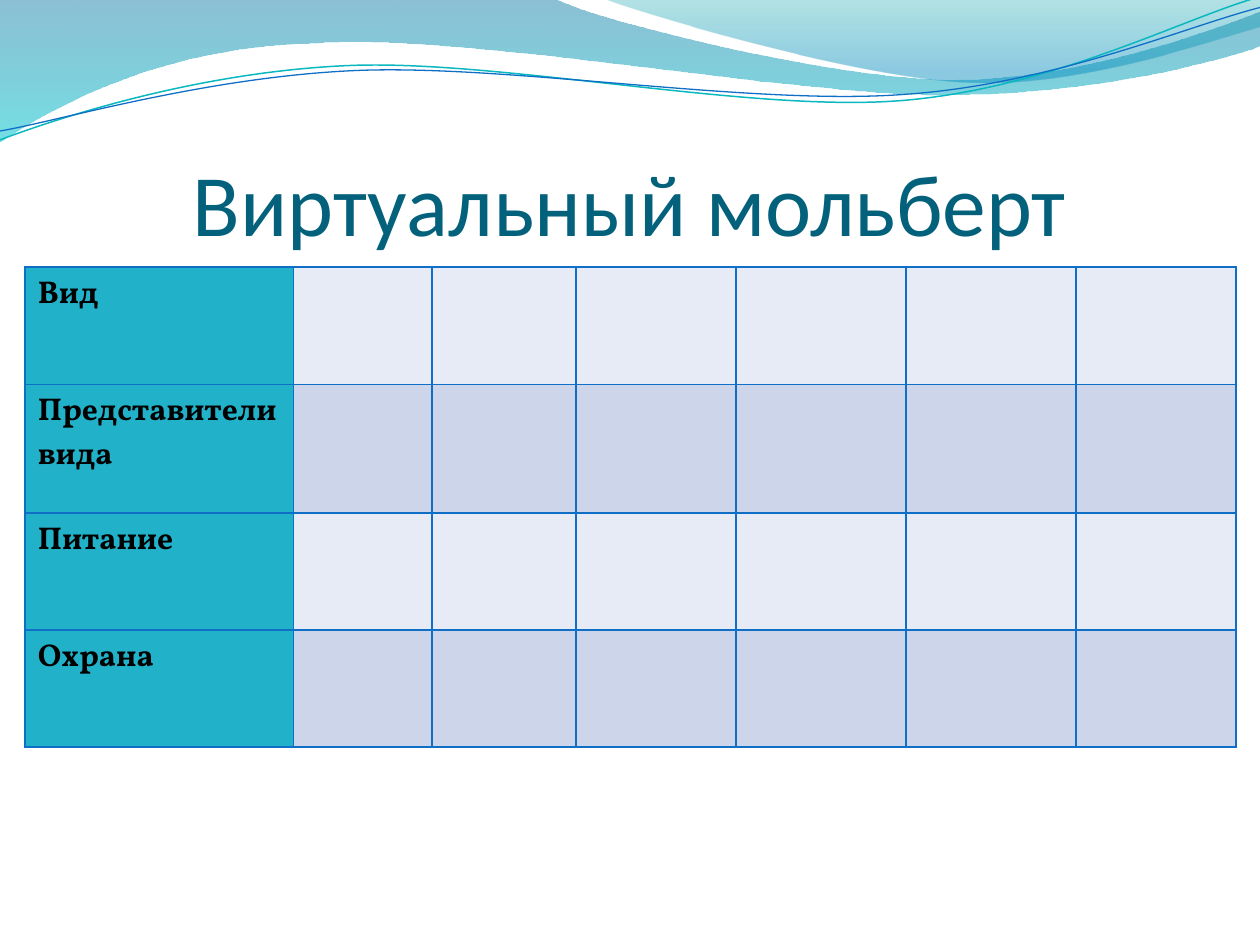
import math
from dataclasses import dataclass

import lxml.etree
import pptx
import pptx.dml.color
import pptx.enum.text
import pptx.oxml.ns
import pptx.util

Inches = pptx.util.Inches
qn = pptx.oxml.ns.qn
Point = tuple[float, float]


@dataclass
class Stop:
    position: float
    color: str
    opacity: int


@dataclass
class Wave:
    start: Point
    segments: list[tuple[Point, ...]]
    stops: tuple[Stop, ...] = ()
    line_color: str = ""
    line_width: float = 0
    center: Point = (0, 0)
    rotation: float = 0


WAVES = [
    Wave(
        (0, 0),
        [
            ((4.4, -0.01),),
            ((4.76, 0.17), (6.64, 0.63), (7.58, 0.63)),
            ((8.53, 0.63), (9.58, 0.26), (10, 0.09)),
            ((10.01, 0.36),),
            ((9.83, 0.44), (8.7, 0.76), (7.46, 0.75)),
            ((6.22, 0.75), (3.82, 0.28), (2.57, 0.34)),
            ((1.29, 0.36), (0.46, 0.83), (-0.01, 1.13)),
        ],
        stops=(Stop(0, "0074A1", 45), Stop(1, "00C6CF", 55)),
    ),
    Wave(
        (4.79, -0.01),
        [
            ((5.09, 0.11), (6.82, 0.62), (7.69, 0.65)),
            ((8.56, 0.69), (9.61, 0.32), (10, 0.21)),
            ((10, 0),),
        ],
        stops=(Stop(0, "00A1A9", 30), Stop(0.8, "008BBF", 45)),
    ),
    Wave(
        (0, 1.11),
        [
            ((0.48, 0.93), (1.58, 0.57), (2.77, 0.52)),
            ((3.95, 0.47), (5.93, 0.89), (7.13, 0.8)),
            ((8.33, 0.71), (9.38, 0.15), (9.98, -0.02)),
        ],
        line_color="0AB8BF",
        line_width=0.85,
        center=(4.99, 0.57),
        rotation=357.3,
    ),
    Wave(
        (0, 1.04),
        [
            ((0.47, 0.96), (1.64, 0.61), (2.83, 0.56)),
            ((4.03, 0.51), (5.97, 0.84), (7.17, 0.75)),
            ((8.36, 0.67), (9.41, 0.21), (10, 0.06)),
        ],
        line_color="0F6FC6",
        line_width=0.75,
        center=(5, 0.59),
        rotation=357.3,
    ),
]

ROW_LABELS = ["Вид", "Представители вида", "Питание", "Охрана"]
COLUMN_WIDTHS = [2.13, 1.1, 1.14, 1.27, 1.35, 1.35, 1.27]
ROW_HEIGHTS = [0.93, 1.02, 0.93, 0.93]
ROW_BANDS = ["E7EBF5", "CCD5EA"]


def rgb(color: str) -> pptx.dml.color.RGBColor:
    return pptx.dml.color.RGBColor.from_string(color)


def add_run(paragraph, text: str, font: str, size: float, color: str, bold: bool = False) -> None:
    run = paragraph.add_run()
    run.text = text
    run.font.name = font
    run.font.size = pptx.util.Pt(size)
    run.font.bold = bold
    run.font.color.rgb = rgb(color)


def unrotated(point: Point, wave: Wave) -> Point:
    angle = math.radians(-wave.rotation)
    dx, dy = point[0] - wave.center[0], point[1] - wave.center[1]
    x = wave.center[0] + dx * math.cos(angle) - dy * math.sin(angle)
    y = wave.center[1] + dx * math.sin(angle) + dy * math.cos(angle)
    return Inches(x), Inches(y)


def bend_segments(ribbon, segments: list[tuple[Point, ...]]) -> None:
    lines = iter(list(ribbon._element.iter(qn("a:lnTo"))))
    for segment in segments:
        edges = [next(lines) for _ in segment]
        if len(edges) == 3:
            curve = lxml.etree.Element(qn("a:cubicBezTo"))
            edges[0].addprevious(curve)
            for edge in edges:
                curve.append(edge[0])
                edge.getparent().remove(edge)


def add_wave(slide, wave: Wave) -> None:
    outline = [wave.start] + [point for segment in wave.segments for point in segment]
    vertices = [unrotated(point, wave) for point in outline]
    builder = slide.shapes.build_freeform(*vertices[0])
    builder.add_line_segments(vertices[1:], close=bool(wave.stops))
    ribbon = builder.convert_to_shape()
    bend_segments(ribbon, wave.segments)
    ribbon.rotation = wave.rotation
    ribbon.shadow.inherit = False
    if not wave.stops:
        ribbon.fill.background()
        ribbon.line.color.rgb = rgb(wave.line_color)
        ribbon.line.width = pptx.util.Pt(wave.line_width)
        return
    ribbon.line.fill.background()
    ribbon.fill.gradient()
    ribbon.fill.gradient_angle = 270
    for gradient_stop, stop in zip(ribbon.fill.gradient_stops, wave.stops):
        gradient_stop.position = stop.position
        gradient_stop.color.rgb = rgb(stop.color)
    gradient_colors = ribbon._element.spPr.iter(qn("a:srgbClr"))
    for color, stop in zip(list(gradient_colors), wave.stops):
        alpha = lxml.etree.SubElement(color, qn("a:alpha"))
        alpha.set("val", str(stop.opacity * 1000))


def add_borders(cell, color: str, width: float) -> None:
    properties = cell._tc.get_or_add_tcPr()
    for side in ("lnL", "lnR", "lnT", "lnB"):
        border = lxml.etree.SubElement(properties, qn(f"a:{side}"))
        border.set("w", str(pptx.util.Pt(width)))
        fill = lxml.etree.SubElement(border, qn("a:solidFill"))
        lxml.etree.SubElement(fill, qn("a:srgbClr")).set("val", color)


def format_title(slide) -> None:
    title = slide.shapes.title
    slide.shapes._spTree.append(title._element)
    title.left, title.top = Inches(0.5), Inches(0.77)
    title.width, title.height = Inches(9), Inches(1.25)
    frame = title.text_frame
    frame.auto_size = pptx.enum.text.MSO_AUTO_SIZE.NONE
    frame.vertical_anchor = pptx.enum.text.MSO_ANCHOR.BOTTOM
    frame.margin_left = frame.margin_right = frame.margin_bottom = 0
    frame.margin_top = Inches(0.05)
    heading = frame.paragraphs[0]
    heading.alignment = pptx.enum.text.PP_ALIGN.CENTER
    add_run(heading, "Виртуальный мольберт", "Calibri", 50, "04617B")


def add_easel(slide) -> None:
    easel = slide.shapes.add_table(
        len(ROW_HEIGHTS), len(COLUMN_WIDTHS), Inches(0.2), Inches(2.12),
        Inches(sum(COLUMN_WIDTHS)), Inches(sum(ROW_HEIGHTS)),
    ).table
    for column, width in zip(easel.columns, COLUMN_WIDTHS):
        column.width = Inches(width)
    for index, (row, height) in enumerate(zip(easel.rows, ROW_HEIGHTS)):
        row.height = Inches(height)
        for position, cell in enumerate(row.cells):
            add_borders(cell, "0F6FC6", 1)
            cell.fill.solid()
            band = ROW_BANDS[index % len(ROW_BANDS)]
            cell.fill.fore_color.rgb = rgb(band if position else "21B2C9")
        label = row.cells[0].text_frame.paragraphs[0]
        add_run(label, ROW_LABELS[index], "Vollkorn", 18, "000000", bold=True)


def main() -> None:
    presentation = pptx.Presentation()
    presentation.slide_width = Inches(10)
    presentation.slide_height = Inches(7.5)
    slide = presentation.slides.add_slide(presentation.slide_layouts[5])
    for wave in WAVES:
        add_wave(slide, wave)
    format_title(slide)
    add_easel(slide)
    presentation.save("out.pptx")


if __name__ == "__main__":
    main()
